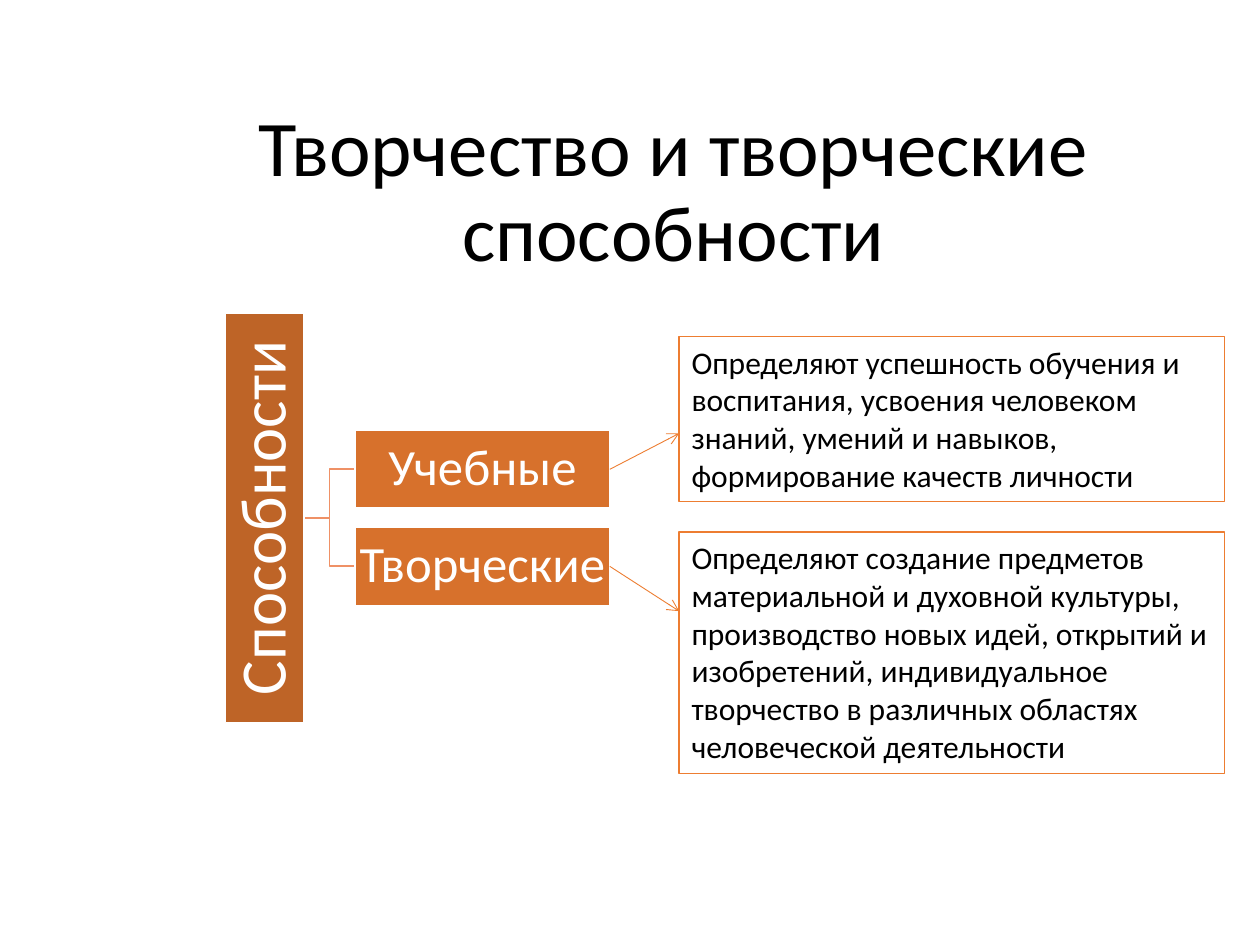
import pptx
import pptx.dml.color
import pptx.enum.shapes
import pptx.enum.text
import pptx.oxml
import pptx.util
from pptx.util import Inches, Pt

ALIGN = pptx.enum.text.PP_ALIGN
ANCHOR = pptx.enum.text.MSO_ANCHOR
SHAPE = pptx.enum.shapes.MSO_SHAPE
CONNECTOR = pptx.enum.shapes.MSO_CONNECTOR

TITLE = "Творчество и творческие способности"
ROOT = "Способности"
# label, description, description top and height, arrow end height
BRANCHES = [
    ("Учебные",
     "Определяют успешность обучения и воспитания, усвоения человеком знаний, "
     "умений и навыков, формирование качеств личности",
     2.67, 1.31, 3.44),
    ("Творческие",
     "Определяют создание предметов материальной и духовной культуры, "
     "производство новых идей, открытий и изобретений, индивидуальное "
     "творчество в различных областях человеческой деятельности",
     4.22, 1.92, 4.85),
]

ACCENT, ROOT_FILL, BRANCH_FILL, LINK = "ED7D31", "BE6427", "D7712C", "EF9166"
WHITE, BLACK = "FFFFFF", "000000"

BAR_H = 0.62                            # thickness of every label bar
ROOT_LEN, ROOT_RIGHT, ROOT_MID = 3.25, 2.41, 4.11
BRANCH_X, BRANCH_W, BRANCH_STEP = 2.82, 2.02, 0.77
BOX_X, BOX_W = 5.39, 4.33


def rgb(hex_color):
    return pptx.dml.color.RGBColor.from_string(hex_color)


def set_line(s, color, width):
    s.line.color.rgb = rgb(color)
    s.line.width = Pt(width)


def write(s, text, size, color=WHITE, align=ALIGN.CENTER, anchor=ANCHOR.MIDDLE,
          spacing=None, inset=None):
    tf = s.text_frame
    tf.word_wrap = True
    tf.vertical_anchor = anchor
    if inset is not None:
        tf.margin_left = tf.margin_right = Inches(inset)
        tf.margin_top = tf.margin_bottom = Inches(inset)
    p = tf.paragraphs[0]
    p.alignment = align
    p.line_spacing = spacing
    r = p.add_run()
    r.text = text
    r.font.name = "Calibri"
    r.font.size = Pt(size)
    r.font.color.rgb = rgb(color)


def add_rect(slide, x, y, w, h, fill, line):
    s = slide.shapes.add_shape(SHAPE.RECTANGLE, Inches(x), Inches(y), Inches(w), Inches(h))
    s.shadow.inherit = False
    s.fill.solid()
    s.fill.fore_color.rgb = rgb(fill)
    set_line(s, line, 1)
    return s


def add_link(slide, mid_y):
    """Draw the stepped line from the root bar to a branch."""
    mid_x = (ROOT_RIGHT + BRANCH_X) / 2
    start, *rest = [(Inches(x), Inches(y)) for x, y in
                    [(ROOT_RIGHT, ROOT_MID), (mid_x, ROOT_MID),
                     (mid_x, mid_y), (BRANCH_X, mid_y)]]
    builder = slide.shapes.build_freeform(*start)
    builder.add_line_segments(rest, close=False)
    s = builder.convert_to_shape()
    s.shadow.inherit = False
    s.fill.background()
    set_line(s, LINK, 1)


def add_arrow(slide, branch, y):
    s = slide.shapes.add_connector(CONNECTOR.STRAIGHT, 0, 0, Inches(BOX_X), Inches(y))
    s.begin_connect(branch, 3)
    set_line(s, ACCENT, 0.5)
    ns = pptx.oxml.ns.nsdecls("a")
    s.line._get_or_add_ln().append(
        pptx.oxml.parse_xml(f'<a:tailEnd {ns} type="arrow"/>'))
    s._element.spPr.append(pptx.oxml.parse_xml(f"<a:effectLst {ns}/>"))


def main():
    prs = pptx.Presentation()
    prs.slide_width, prs.slide_height = Inches(10), Inches(7.5)
    slide = prs.slides.add_slide(prs.slide_layouts[6])

    title = slide.shapes.add_textbox(Inches(1.38), Inches(0.76), Inches(7.93), Inches(1.5))
    write(title, TITLE, 45, color=BLACK, anchor=ANCHOR.BOTTOM, spacing=0.9)

    middles = [ROOT_MID + (i - (len(BRANCHES) - 1) / 2) * BRANCH_STEP
               for i in range(len(BRANCHES))]
    for mid_y in middles:
        add_link(slide, mid_y)

    root = add_rect(slide, ROOT_RIGHT - (BAR_H + ROOT_LEN) / 2, ROOT_MID - BAR_H / 2,
                    ROOT_LEN, BAR_H, ROOT_FILL, WHITE)
    root.rotation = 270
    write(root, ROOT, 37, spacing=0.9, inset=0.03)

    for mid_y, (label, text, top, height, arrow_y) in zip(middles, BRANCHES):
        branch = add_rect(slide, BRANCH_X, mid_y - BAR_H / 2, BRANCH_W, BAR_H,
                          BRANCH_FILL, WHITE)
        write(branch, label, 29, spacing=0.9, inset=0.02)
        box = add_rect(slide, BOX_X, top, BOX_W, height, WHITE, ACCENT)
        write(box, text, 18, color=BLACK, align=ALIGN.LEFT, anchor=ANCHOR.TOP)
        add_arrow(slide, branch, arrow_y)

    prs.save("out.pptx")


if __name__ == "__main__":
    main()
